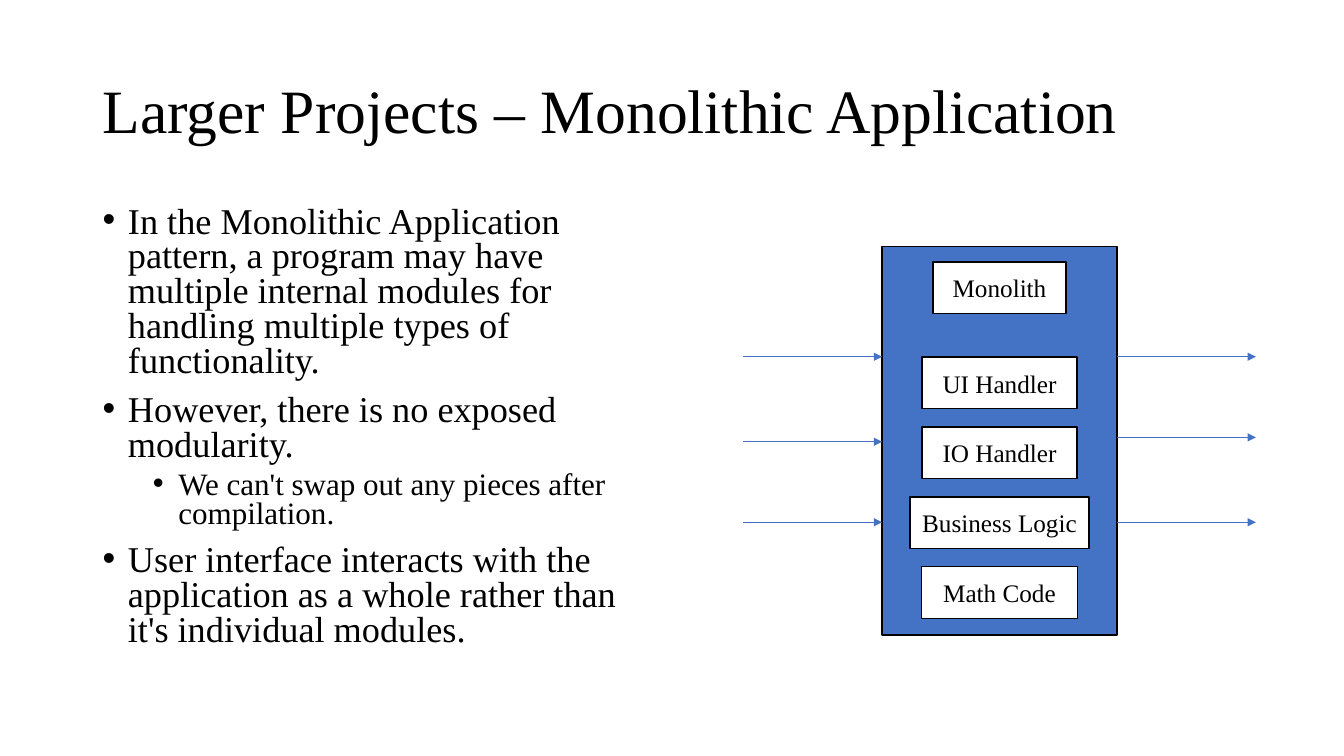
"""Build the slide on the monolithic application pattern."""
from lxml.etree import SubElement
from pptx import Presentation
from pptx.dml.color import RGBColor
from pptx.enum.shapes import MSO_CONNECTOR, MSO_SHAPE
from pptx.enum.text import MSO_ANCHOR, MSO_AUTO_SIZE, PP_ALIGN
from pptx.oxml.ns import qn
from pptx.util import Cm, Pt

BLACK = RGBColor(0x00, 0x00, 0x00)
WHITE = RGBColor(0xFF, 0xFF, 0xFF)
BLUE = RGBColor(0x44, 0x72, 0xC4)

BULLETS = [
    (0, "In the Monolithic Application pattern, a program may have multiple "
        "internal modules for handling multiple types of functionality."),
    (0, "However, there is no exposed modularity."),
    (1, "We can't swap out any pieces after compilation."),
    (0, "User interface interacts with the application as a whole rather "
        "than it's individual modules."),
]
LEVELS = [
    {"size": 25.9, "before": 10, "indent": 0.64},
    {"size": 22.2, "before": 5, "indent": 1.91},
]
HANGING = 0.64
MODULES = [("UI Handler", 3.91), ("IO Handler", 3.91),
           ("Business Logic", 4.52), ("Math Code", 3.94)]
MONOLITH = (22.23, 6.22, 5.92, 9.78)
MODULE_TOP, MODULE_STEP, MODULE_HEIGHT = 9.0, 1.76, 1.3
ARROW_LENGTH = 3.5
INPUT_ROWS = (8.99, 11.13, 13.16)
OUTPUT_ROWS = (8.99, 11.02, 13.16)


def apply(obj, **values):
    for name, value in values.items():
        setattr(obj, name, value)


class SlideBuilder:
    def __init__(self, prs, font="Times New Roman"):
        self.s = prs.slides.add_slide(prs.slide_layouts[1])
        self.font = font

    def place(self, sp, left, top, width, height):
        apply(sp, left=Cm(left), top=Cm(top), width=Cm(width), height=Cm(height))

    def add_text(self, p, text, size):
        r = p.add_run()
        r.text = text
        apply(r.font, name=self.font, size=Pt(size))
        r.font.color.rgb = BLACK

    def title(self, text, *box):
        sp = self.s.shapes.title
        self.place(sp, *box)
        apply(sp.text_frame, vertical_anchor=MSO_ANCHOR.MIDDLE,
              auto_size=MSO_AUTO_SIZE.NONE)
        p = sp.text_frame.paragraphs[0]
        apply(p, alignment=PP_ALIGN.LEFT, line_spacing=0.9)
        self.add_text(p, text, 44)

    def bullets(self, items, *box):
        sp = self.s.placeholders[1]
        self.place(sp, *box)
        tf = sp.text_frame
        tf.auto_size = MSO_AUTO_SIZE.NONE
        for i, (level, text) in enumerate(items):
            p = tf.add_paragraph() if i else tf.paragraphs[0]
            style = LEVELS[level]
            apply(p, level=level, line_spacing=0.8,
                  space_before=Pt(style["before"]))
            pPr = p._p.get_or_add_pPr()
            pPr.set("marL", str(Cm(style["indent"])))
            pPr.set("indent", str(-Cm(HANGING)))
            SubElement(pPr, qn("a:buFont")).set("typeface", "Arial")
            SubElement(pPr, qn("a:buChar")).set("char", "•")
            self.add_text(p, text, style["size"])

    def rect(self, shapes, fill, box, text=None):
        sp = shapes.add_shape(MSO_SHAPE.RECTANGLE, *map(Cm, box))
        sp.shadow.inherit = False
        sp.fill.solid()
        sp.fill.fore_color.rgb = fill
        sp.line.color.rgb = BLACK
        sp.line.width = Pt(1)
        if text:
            apply(sp.text_frame, vertical_anchor=MSO_ANCHOR.MIDDLE,
                  word_wrap=False)
            p = sp.text_frame.paragraphs[0]
            p.alignment = PP_ALIGN.CENTER
            self.add_text(p, text, 18)

    def monolith(self):
        shapes = self.s.shapes.add_group_shape().shapes
        left, top, width, height = MONOLITH
        centre = left + width / 2
        self.rect(shapes, BLUE, MONOLITH)
        boxes = [("Monolith", 3.35, 6.6)]
        boxes += [(name, w, MODULE_TOP + i * MODULE_STEP)
                  for i, (name, w) in enumerate(MODULES)]
        for name, w, y in boxes:
            self.rect(shapes, WHITE, (centre - w / 2, y, w, MODULE_HEIGHT), name)

    def arrow(self, left, y):
        cxn = self.s.shapes.add_connector(
            MSO_CONNECTOR.STRAIGHT, Cm(left), Cm(y), Cm(left + ARROW_LENGTH), Cm(y))
        cxn.line.color.rgb = BLUE
        cxn.line.width = Pt(0.5)
        spPr = cxn._element.spPr
        SubElement(spPr.find(qn("a:ln")), qn("a:tailEnd")).set("type", "triangle")
        SubElement(spPr, qn("a:effectLst"))


def main():
    prs = Presentation()
    apply(prs, slide_width=Cm(33.87), slide_height=Cm(19.05))
    slide = SlideBuilder(prs)
    slide.title("Larger Projects – Monolithic Application", 2.33, 1.01, 29.21, 3.68)
    slide.bullets(BULLETS, 2.33, 5.07, 14.4, 12.09)
    slide.monolith()
    left, _, width, _ = MONOLITH
    for start, rows in ((left - ARROW_LENGTH, INPUT_ROWS),
                        (left + width, OUTPUT_ROWS)):
        for y in rows:
            slide.arrow(start, y)
    prs.save("out.pptx")


if __name__ == "__main__":
    main()
